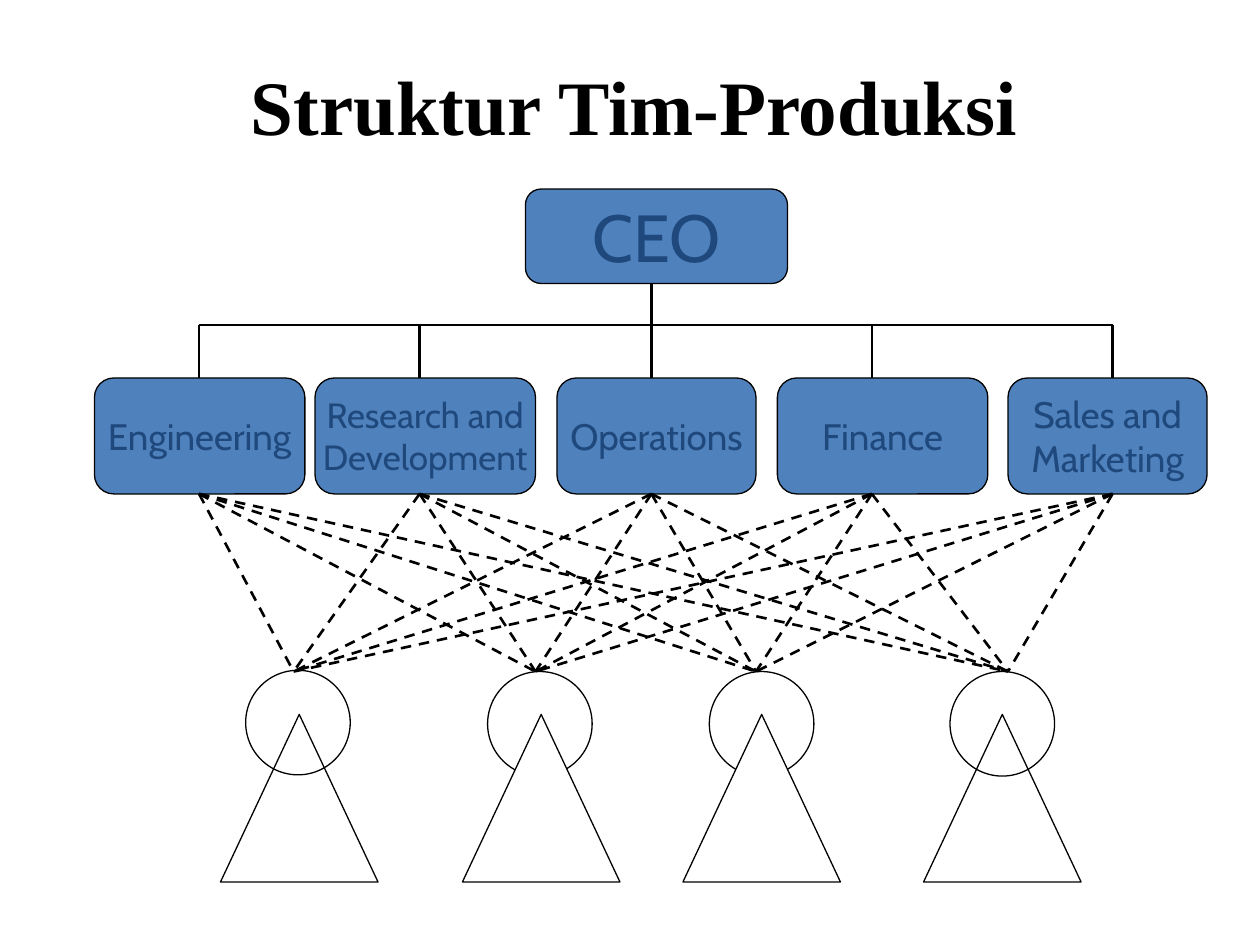
import pptx
import pptx.util
import pptx.dml.color
import pptx.enum.dml
import pptx.enum.shapes
import pptx.enum.text
import pptx.oxml.ns
import lxml.etree

Inches = pptx.util.Inches
Pt = pptx.util.Pt
RGB = pptx.dml.color.RGBColor
KIND = pptx.enum.shapes.MSO_SHAPE
MIDDLE = pptx.enum.text.MSO_ANCHOR.MIDDLE
CENTER = pptx.enum.text.PP_ALIGN.CENTER

BLACK = RGB(0x00, 0x00, 0x00)
WHITE = RGB(0xFF, 0xFF, 0xFF)
BLUE = RGB(0x4F, 0x81, 0xBD)
NAVY = RGB(0x1F, 0x49, 0x7D)

UNITS = [
    ("Engineering", 0.75, 1.67, 1.58, 21),
    ("Research and\vDevelopment", 2.5, 1.75, 3.33, 20),
    ("Operations", 4.42, 1.58, 5.17, 21),
    ("Finance", 6.17, 1.67, 6.92, 21),
    ("Sales and\vMarketing", 8, 1.58, 8.83, 21),
]
STEMS = [stem for _, _, _, stem, _ in UNITS]
TEAMS = [
    (1.75, 1.95, 5.32, 2.33, None),
    (3.67, 3.87, 5.33, 4.25, WHITE),
    (5.42, 5.63, 5.33, 6, WHITE),
    (7.33, 7.54, 5.33, 8, None),
]


def add_line(slide, x1, y1, x2, y2, dashed=False):
    line = slide.shapes.add_connector(
        pptx.enum.shapes.MSO_CONNECTOR.STRAIGHT,
        Inches(x1), Inches(y1), Inches(x2), Inches(y2))
    line.line.color.rgb = BLACK
    line.line.width = Pt(1.5)
    if dashed:
        line.line.dash_style = pptx.enum.dml.MSO_LINE.DASH
    lxml.etree.SubElement(line._element.spPr, pptx.oxml.ns.qn("a:effectLst"))


def add_form(slide, kind, left, top, width, height, fill=None):
    form = slide.shapes.add_shape(
        kind, Inches(left), Inches(top), Inches(width), Inches(height))
    form.shadow.inherit = False
    form.line.color.rgb = BLACK
    form.line.width = Pt(0.75)
    if fill is None:
        form.fill.background()
    else:
        form.fill.solid()
        form.fill.fore_color.rgb = fill
    return form


def set_text(frame, text, size, font, color, bold=False):
    frame.text = text
    frame.vertical_anchor = MIDDLE
    para = frame.paragraphs[0]
    para.alignment = CENTER
    para.font.size = Pt(size)
    para.font.name = font
    para.font.bold = bold
    para.font.color.rgb = color


def add_title(slide, left, top, width, height):
    title = slide.shapes.title
    title.left, title.top = Inches(left), Inches(top)
    title.width, title.height = Inches(width), Inches(height)
    set_text(title.text_frame, "Struktur Tim-Produksi", 44,
             "Times New Roman", BLACK, True)


def add_box(slide, text, size, left, top, width, height):
    box = add_form(slide, KIND.FLOWCHART_ALTERNATE_PROCESS,
                   left, top, width, height, BLUE)
    box.text_frame.word_wrap = False
    set_text(box.text_frame, text, size, "Cabin", NAVY)


def add_chief(slide, left, top, width, height, rail):
    add_line(slide, STEMS[2], top + height, STEMS[2], rail)
    add_line(slide, STEMS[0], rail, STEMS[-1], rail)
    add_box(slide, "CEO", 38, left, top, width, height)


def add_units(slide, top, height, rail):
    for text, left, width, stem, size in UNITS:
        add_line(slide, stem, rail, stem, top + 0.33)
        add_box(slide, text, size, left, top, width, height)


def add_teams(slide, top, height):
    for left, head, crown, _, fill in TEAMS:
        add_form(slide, KIND.OVAL, head, crown, 0.83, 0.83)
        add_form(slide, KIND.ISOSCELES_TRIANGLE, left, top, 1.25, height, fill)


def add_links(slide, top, height):
    for stem in STEMS:
        for _, _, _, goal, _ in TEAMS:
            add_line(slide, stem, top, goal, top + height, True)


def main():
    deck = pptx.Presentation()
    deck.slide_width, deck.slide_height = Inches(10), Inches(7.5)
    slide = deck.slides.add_slide(deck.slide_layouts[5])
    add_title(slide, 0.57, 0.11, 8.93, 1.44)
    add_chief(slide, 4.17, 1.5, 2.08, 0.75, 2.58)
    add_units(slide, 3, 0.92, 2.58)
    add_teams(slide, 5.67, 1.33)
    add_links(slide, 3.92, 1.41)
    deck.save("out.pptx")


if __name__ == "__main__":
    main()
